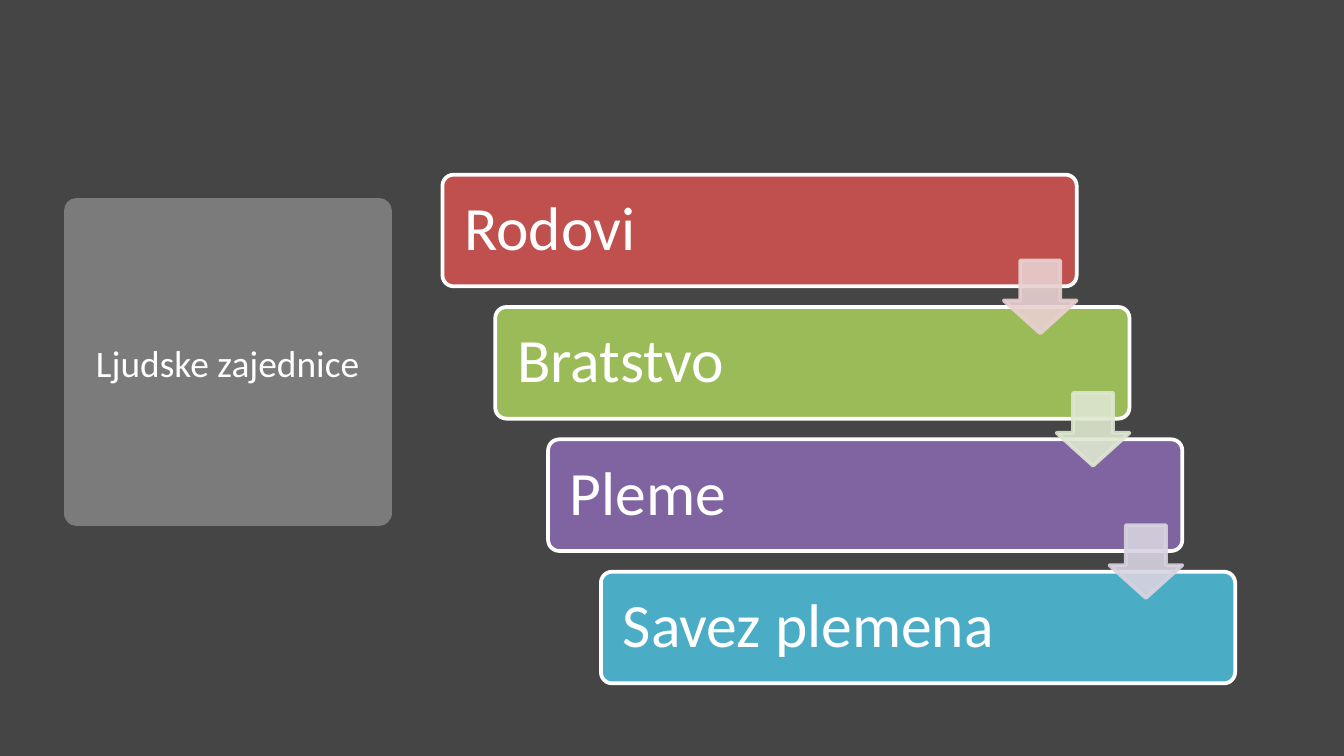
import pptx
import pptx.util
import pptx.dml.color
import pptx.enum.shapes
import pptx.enum.text
import pptx.oxml.ns
import lxml.etree

Pt = pptx.util.Pt
SHAPE = pptx.enum.shapes.MSO_SHAPE
ALIGN = pptx.enum.text.PP_ALIGN
qn = pptx.oxml.ns.qn

TITLE = "Ljudske zajednice"
STEPS = [
    ("Rodovi", "C0504D", "E8D0D0"),
    ("Bratstvo", "9BBB59", "DEE7D1"),
    ("Pleme", "8064A2", "D8D3E0"),
    ("Savez plemena", "4BACC6", None),
]

THEME = {
    "font": "Calibri", "background": "454545", "title_fill": "7B7B7B",
    "text": "FFFFFF", "title_size": 20, "step_size": 33,
}

SLIDE_W, SLIDE_H = 720, 405
TITLE_LEFT, TITLE_TOP, TITLE_SIDE, TITLE_LINE = 41, 113, 162, 13.75
BAR_LEFT, BAR_TOP, BAR_W, BAR_H = 237, 93.6, 339.8, 59.8
STEP_X, STEP_Y = 28.3, 70.9
ARROW_SIDE, ARROW_DROP = 39, 46
INSET = 10


def rgb(value):
    return pptx.dml.color.RGBColor.from_string(value)


def paint(sp, fill, line, width):
    sp.fill.solid()
    sp.fill.fore_color.rgb = rgb(fill)
    sp.line.color.rgb = rgb(line)
    sp.line.width = Pt(width)
    sp.shadow.inherit = False


def write(sp, text, size, align, inset):
    tf = sp.text_frame
    tf.text = text
    tf.word_wrap = True
    tf.auto_size = pptx.enum.text.MSO_AUTO_SIZE.NONE
    tf.vertical_anchor = pptx.enum.text.MSO_ANCHOR.MIDDLE
    tf.margin_left = tf.margin_right = Pt(inset)
    tf.margin_top = tf.margin_bottom = Pt(inset)
    p = tf.paragraphs[0]
    p.alignment = align
    font = p.runs[0].font
    font.name = THEME["font"]
    font.size = Pt(size)
    font.color.rgb = rgb(THEME["text"])
    return p


def add_title(s):
    sp = s.shapes.title
    sp.left, sp.top = Pt(TITLE_LEFT), Pt(TITLE_TOP)
    sp.width = sp.height = Pt(TITLE_SIDE)
    paint(sp, THEME["title_fill"], THEME["title_fill"], TITLE_LINE)
    write(sp, TITLE, THEME["title_size"], ALIGN.CENTER, 5)


def add_bar(s, left, top, text, color):
    sp = s.shapes.add_shape(SHAPE.ROUNDED_RECTANGLE, Pt(left), Pt(top), Pt(BAR_W), Pt(BAR_H))
    sp.adjustments[0] = 0.1
    paint(sp, color, THEME["text"], 2)
    p = write(sp, text, THEME["step_size"], ALIGN.LEFT, INSET)
    p.line_spacing = 0.9


def add_arrow(s, left, top, color):
    sp = s.shapes.add_shape(SHAPE.DOWN_ARROW, Pt(left), Pt(top), Pt(ARROW_SIDE), Pt(ARROW_SIDE))
    sp.adjustments[0] = 0.55
    sp.adjustments[1] = 0.45
    paint(sp, color, color, 2)
    for clr in sp.element.spPr.iter(qn("a:srgbClr")):
        lxml.etree.SubElement(clr, qn("a:alpha"), val="90000")


def main():
    prs = pptx.Presentation()
    prs.slide_width, prs.slide_height = Pt(SLIDE_W), Pt(SLIDE_H)
    s = prs.slides.add_slide(prs.slide_layouts[5])
    s.background.fill.solid()
    s.background.fill.fore_color.rgb = rgb(THEME["background"])
    add_title(s)

    places = [(BAR_LEFT + i * STEP_X, BAR_TOP + i * STEP_Y) for i in range(len(STEPS))]
    for (left, top), (text, color, _) in zip(places, STEPS):
        add_bar(s, left, top, text, color)
    for (left, top), (_, _, tint) in zip(places, STEPS):
        if tint:
            add_arrow(s, left + BAR_W - ARROW_SIDE, top + ARROW_DROP, tint)
    prs.save("out.pptx")


if __name__ == "__main__":
    main()
